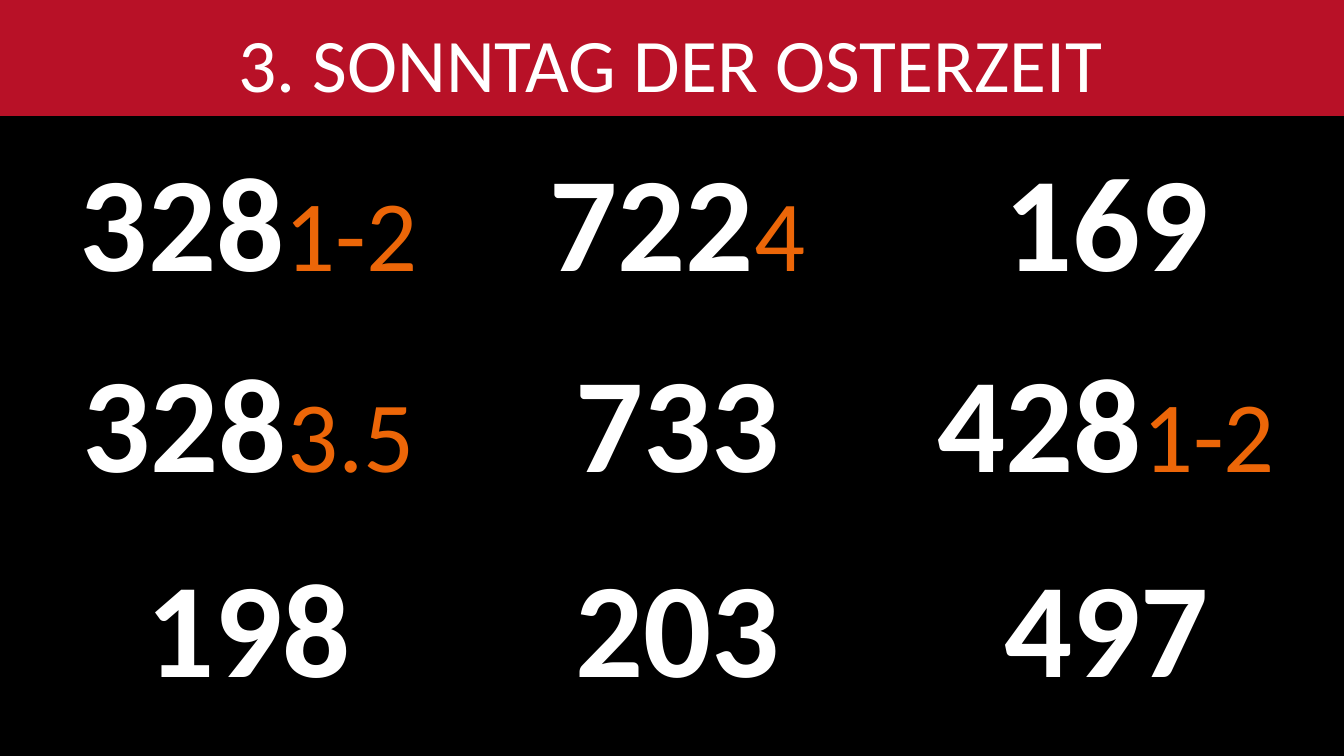
from dataclasses import dataclass

from pptx import Presentation
from pptx.dml.color import RGBColor
from pptx.enum import shapes, text
from pptx.util import Inches, Pt

# Content: each hymn is a number and its verses; the last row is still free
SUNDAY = "3. SONNTAG DER OSTERZEIT"
HYMNS = [
    [("328", "1-2"), ("722", "4"), ("169", "")],
    [("328", "3.5"), ("733", ""), ("428", "1-2")],
    [("198", ""), ("203", ""), ("497", "")],
    [("", ""), ("", ""), ("", "")],
]
ROW_HEIGHTS = [2, 2.03, 1.98, 1.98]
BOARD_WIDTH = 12.76
NO_GRID_STYLE = "{2D5ABB26-0587-4C30-8999-92F81FD0307C}"


@dataclass(frozen=True)
class Theme:
    font: str = "Calibri"
    background: str = "000000"
    banner: str = "B81127"
    light: str = "FFFFFF"
    verse: str = "EC6608"
    title_size: int = 54
    number_size: int = 96
    verse_size: int = 72


THEME = Theme()


def add_run(paragraph, wording, *, size, color, bold=False):
    paragraph.alignment = text.PP_ALIGN.CENTER
    run = paragraph.add_run()
    run.text = wording
    run.font.name = THEME.font
    run.font.size = Pt(size)
    run.font.bold = bold
    run.font.color.rgb = RGBColor.from_string(color)


def paint(fill, color):
    fill.solid()
    fill.fore_color.rgb = RGBColor.from_string(color)


def add_heading(slide, slide_width):
    # Red banner, behind the title
    banner = slide.shapes.add_shape(
        shapes.MSO_SHAPE.RECTANGLE, 0, 0, slide_width, Inches(1.15))
    banner.shadow.inherit = False
    paint(banner.fill, THEME.banner)
    banner.line.fill.background()
    slide.shapes._spTree.insert(2, banner._element)

    # Title
    title = slide.shapes.title
    title.left, title.top = Inches(0.17), Inches(0.12)
    title.width, title.height = Inches(12.96), Inches(1.01)
    frame = title.text_frame
    frame.auto_size = text.MSO_AUTO_SIZE.NONE
    frame.vertical_anchor = text.MSO_ANCHOR.TOP
    add_run(frame.paragraphs[0], SUNDAY, size=THEME.title_size, color=THEME.light)


def add_hymn_board(slide):
    # Equal columns without grid lines
    board = slide.shapes.add_table(
        len(HYMNS), len(HYMNS[0]), Inches(0.34), Inches(1.37),
        Inches(BOARD_WIDTH), Inches(sum(ROW_HEIGHTS))).table
    board.first_row = board.horz_banding = False
    board._tbl.tblPr.find("{*}tableStyleId").text = NO_GRID_STYLE

    # Numbers, each followed by its verses
    for row, height, hymns in zip(board.rows, ROW_HEIGHTS, HYMNS):
        row.height = Inches(height)
        for cell, (number, verses) in zip(row.cells, hymns):
            cell.fill.background()
            line = cell.text_frame.paragraphs[0]
            if number:
                add_run(line, number, size=THEME.number_size,
                        color=THEME.light, bold=True)
            if verses:
                add_run(line, verses, size=THEME.verse_size, color=THEME.verse)


def main():
    deck = Presentation()
    deck.slide_width, deck.slide_height = Inches(13.33), Inches(7.5)
    slide = deck.slides.add_slide(deck.slide_layouts[5])
    paint(slide.background.fill, THEME.background)
    add_heading(slide, deck.slide_width)
    add_hymn_board(slide)
    deck.save("out.pptx")


if __name__ == "__main__":
    main()
